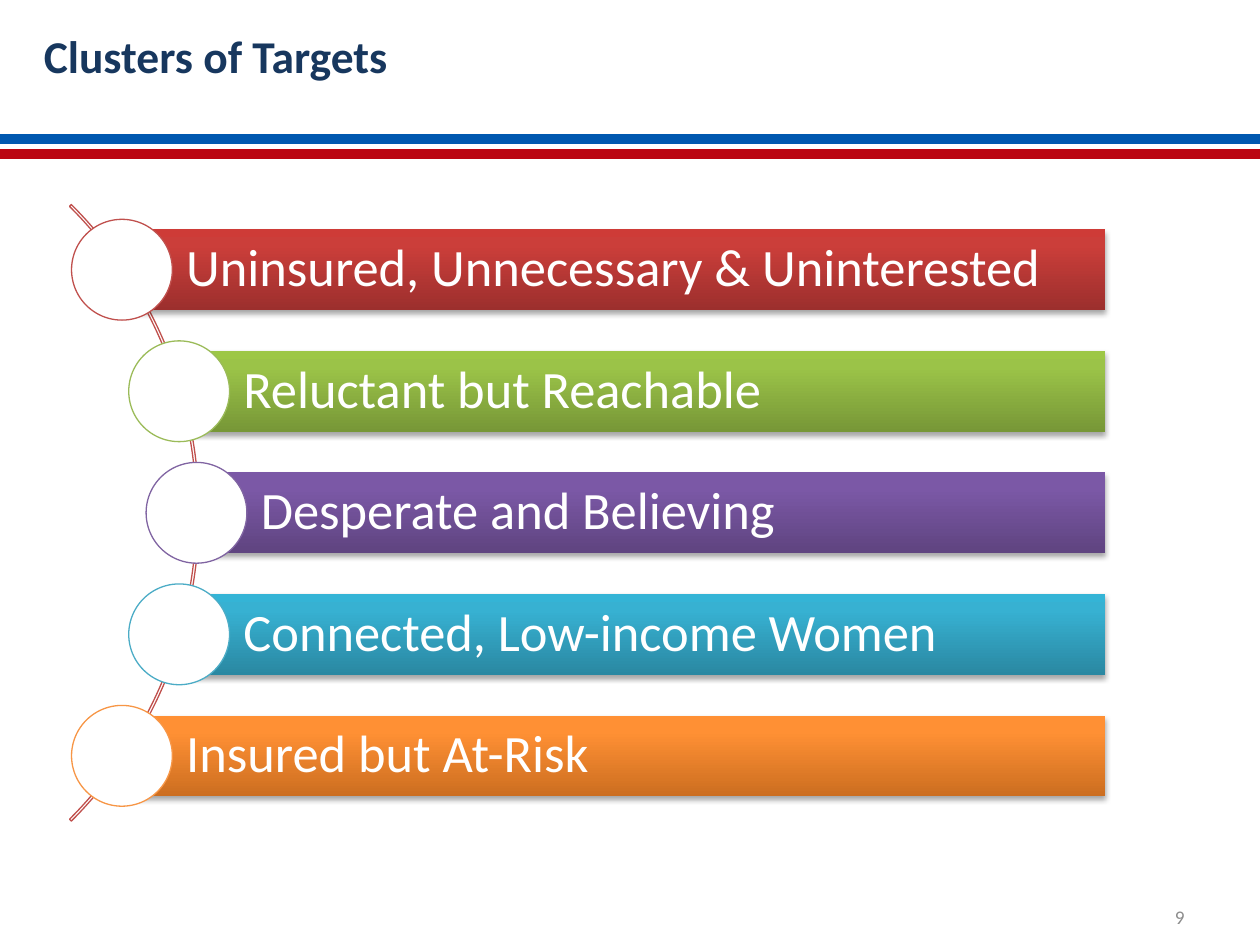
from dataclasses import dataclass
from math import sqrt

from lxml import etree
from pptx import Presentation
from pptx.dml.color import RGBColor
from pptx.enum.shapes import MSO_SHAPE
from pptx.enum.text import MSO_ANCHOR, PP_ALIGN
from pptx.oxml import parse_xml
from pptx.oxml.ns import nsdecls, qn
from pptx.util import Inches, Pt

RECTANGLE, OVAL, ARC = MSO_SHAPE.RECTANGLE, MSO_SHAPE.OVAL, MSO_SHAPE.BLOCK_ARC
TOP, MIDDLE = MSO_ANCHOR.TOP, MSO_ANCHOR.MIDDLE
LEFT, RIGHT = PP_ALIGN.LEFT, PP_ALIGN.RIGHT

TITLE = "Clusters of Targets"
PAGE_NUMBER = "9"
# label, circle outline, gradient from the bottom of the bar to its top
CLUSTERS = [
    ("Uninsured, Unnecessary & Uninterested", "C0504D", ("9C2F2D", "CB3E3A", "CE3B37")),
    ("Reluctant but Reachable", "9BBB59", ("779737", "9BC348", "9DC746")),
    ("Desperate and Believing", "8064A2", ("5F4480", "7B58A6", "7C57A8")),
    ("Connected, Low-income Women", "4BACC6", ("2A88A2", "37B1D2", "34B4D6")),
    ("Insured but At-Risk", "F79646", ("CC6E20", "FF9034", "FF9136")),
]
STRIPES = [(1.08, "0058B0"), (1.17, "FFFFFF"), (1.2, "BB0512")]


@dataclass(frozen=True)
class Theme:
    font: str = "Calibri"
    white: str = "FFFFFF"
    title: str = "17375E"
    number: str = "8C8C8C"
    arc: str = "C0504D"
    shadow: str = "000000"
    title_size: int = 26
    label_size: int = 30
    number_size: int = 11
    outline: float = 0.75
    stripe_outline: float = 2


THEME = Theme()
SLIDE_WIDTH, SLIDE_HEIGHT = 10, 7.5
STRIPE_HEIGHT = 0.05
CENTRE_X, CENTRE_Y = -1.88, 4.07
ARC_SIZE, CURVE_RADIUS = 6.92, 3.44
BAR_HEIGHT, BAR_RIGHT = 0.64, 8.77
ROW_STEP = BAR_HEIGHT * 1.507
CIRCLE = 0.8
GRADIENT_STOPS = (0, 80000, 100000)


def add_shape(slide, kind, area, fill=None, line=None, width=THEME.outline):
    shape = slide.shapes.add_shape(kind, *map(Inches, area))
    if fill:
        shape.fill.solid()
        shape.fill.fore_color.rgb = RGBColor.from_string(fill)
    else:
        shape.fill.background()
    if line:
        shape.line.color.rgb = RGBColor.from_string(line)
        shape.line.width = Pt(width)
    else:
        shape.line.fill.background()
    shape.shadow.inherit = False
    return shape


def write(box, text, size, color, anchor=MIDDLE, align=LEFT, bold=False):
    frame = box.text_frame
    frame.word_wrap = True
    frame.vertical_anchor = anchor
    para = frame.paragraphs[0]
    para.alignment = align
    span = para.add_run()
    span.text = text
    span.font.name = THEME.font
    span.font.size = Pt(size)
    span.font.bold = bold
    span.font.color.rgb = RGBColor.from_string(color)
    return frame


def shade(shape, colors):
    """Give the shape an upward gradient and a soft shadow below it."""
    stops = "".join(
        f'<a:gs pos="{stop}"><a:srgbClr val="{color}"/></a:gs>'
        for stop, color in zip(GRADIENT_STOPS, colors)
    )
    gradient = parse_xml(
        f'<a:gradFill {nsdecls("a")} rotWithShape="1"><a:gsLst>{stops}</a:gsLst>'
        '<a:lin ang="16200000" scaled="0"/></a:gradFill>'
    )
    properties = shape.element.spPr
    properties.replace(properties.find(qn("a:noFill")), gradient)
    shadow = etree.SubElement(
        properties.find(qn("a:effectLst")), qn("a:outerShdw"),
        blurRad=str(Pt(3.1)), dist=str(Pt(1.8)), dir="5400000", rotWithShape="0",
    )
    color = etree.SubElement(shadow, qn("a:srgbClr"), val=THEME.shadow)
    etree.SubElement(color, qn("a:alpha"), val="35000")


def add_cluster(slide, row, label, outline, colors):
    """Place a bar and its circle where the row meets the curve."""
    offset = (row - (len(CLUSTERS) - 1) / 2) * ROW_STEP
    x = CENTRE_X + sqrt(CURVE_RADIUS**2 - offset**2)
    y = CENTRE_Y + offset
    bar = add_shape(slide, RECTANGLE, (x, y - BAR_HEIGHT / 2, BAR_RIGHT - x, BAR_HEIGHT))
    shade(bar, colors)
    frame = write(bar, label, THEME.label_size, THEME.white)
    frame.paragraphs[0].line_spacing = 0.9
    frame.margin_left = Inches(0.51)
    frame.margin_top = frame.margin_right = frame.margin_bottom = Inches(0.08)
    add_shape(slide, OVAL, (x - CIRCLE / 2, y - CIRCLE / 2, CIRCLE, CIRCLE), THEME.white, outline)


def main():
    deck = Presentation()
    deck.slide_width, deck.slide_height = Inches(SLIDE_WIDTH), Inches(SLIDE_HEIGHT)
    slide = deck.slides.add_slide(deck.slide_layouts[6])

    for top, color in STRIPES:
        add_shape(slide, RECTANGLE, (0, top, SLIDE_WIDTH, STRIPE_HEIGHT),
                  color, color, THEME.stripe_outline)

    title = slide.shapes.add_textbox(*map(Inches, (0.25, 0.17, 9, 1.25)))
    write(title, TITLE, THEME.title_size, THEME.title, TOP, bold=True)
    number = slide.shapes.add_textbox(*map(Inches, (7.17, 7.1, 2.33, 0.35)))
    write(number, PAGE_NUMBER, THEME.number_size, THEME.number, align=RIGHT)

    corner = (CENTRE_X - ARC_SIZE / 2, CENTRE_Y - ARC_SIZE / 2)
    arc = add_shape(slide, ARC, (*corner, ARC_SIZE, ARC_SIZE), line=THEME.arc)
    for index, value in enumerate((189, 27, 0.003)):
        arc.adjustments[index] = value

    for row, cluster in enumerate(CLUSTERS):
        add_cluster(slide, row, *cluster)
    deck.save("out.pptx")


if __name__ == "__main__":
    main()
